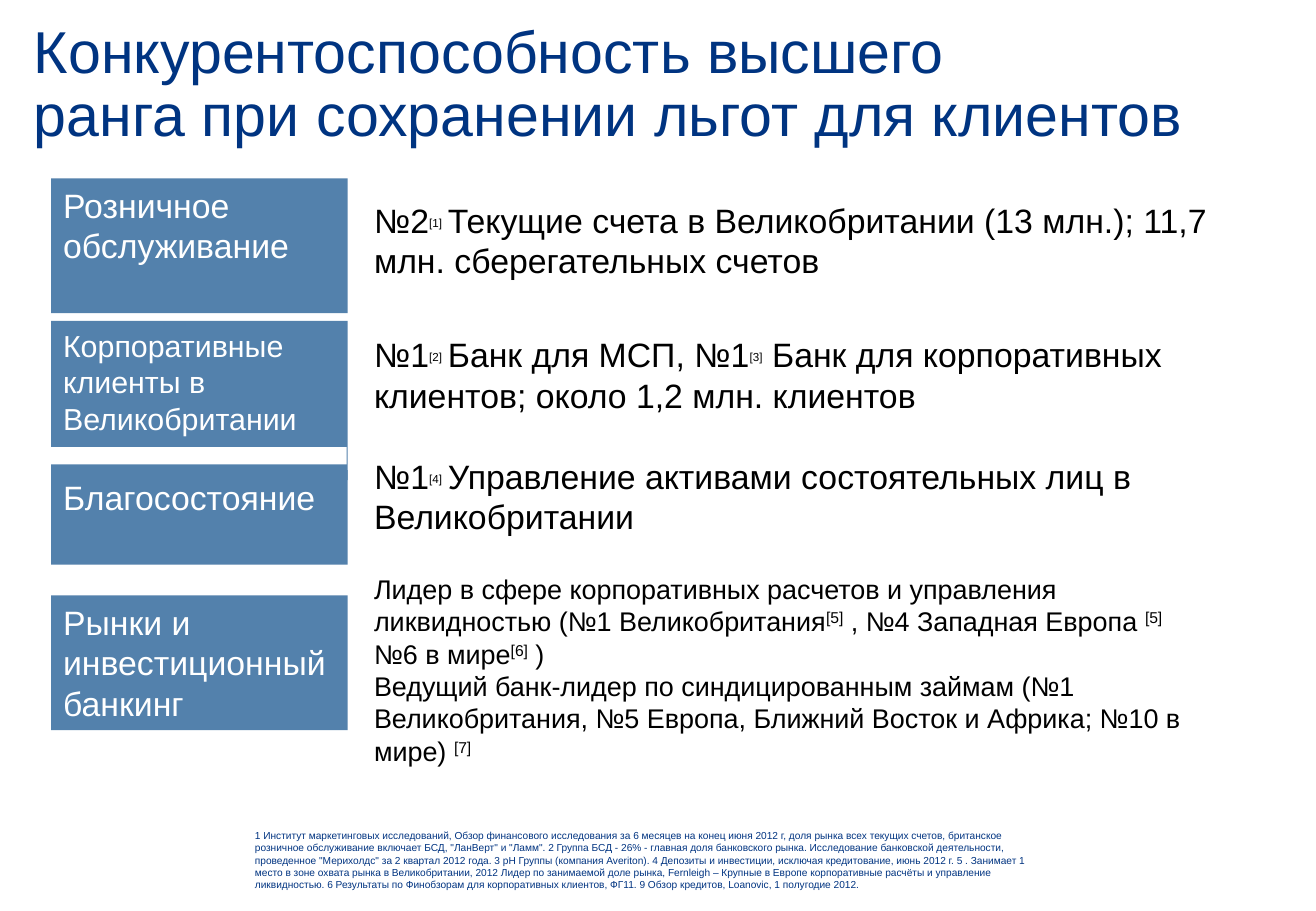
from dataclasses import dataclass

from pptx import Presentation
from pptx import util as u
from pptx.dml.color import RGBColor
from pptx.enum import shapes, text

NAVY, STEEL, WHITE, BLACK = "003481", "5381AC", "FFFFFF", "000000"
LABEL_LEFT, LABEL_WIDTH = 1.07, 6.2
DETAIL_LEFT = 7.57


@dataclass
class Box:
    left: float
    top: float
    width: float
    height: float

    def lengths(self) -> tuple:
        return tuple(u.Cm(n) for n in (self.left, self.top, self.width, self.height))


@dataclass
class Segment:
    label: str
    label_top: float
    label_height: float
    label_size: int
    details: list[str]  # text between "|" marks is a small note mark
    detail_top: float
    detail_width: float
    detail_height: float
    detail_size: int = 20
    note_size: int = 12


SEGMENTS = [
    Segment("Розничное обслуживание", 3.73, 2.82, 20,
            ["№2|[1] |Текущие счета в Великобритании (13 млн.); 11,7 млн. "
             "сберегательных счетов"],
            4.04, 18.47, 2.24),
    Segment("Корпоративные клиенты в Великобритании", 6.71, 3.33, 18,
            ["№1|[2] |Банк для МСП, №1|[3]| Банк для корпоративных клиентов; "
             "около 1,2 млн. клиентов"],
            6.86, 17.75, 3.07),
    Segment("Благосостояние", 9.83, 1.98, 20,
            ["№1|[4] |Управление активами состоятельных лиц в Великобритании"],
            9.4, 17.68, 3),
    Segment("Рынки и инвестиционный банкинг", 12.45, 2.82, 20,
            ["Лидер в сфере корпоративных расчетов и управления ликвидностью "
             "(№1 Великобритания|[5] |, №4 Западная Европа |[5] |№6 в мире|[6] |)",
             "Ведущий банк-лидер по синдицированным займам (№1 Великобритания, "
             "№5 Европа, Ближний Восток и Африка; №10 в мире) |[7]|"],
            11.84, 17.63, 4.37, 16, 16),
]

FOOTNOTE = (
    "1 Институт маркетинговых исследований, Обзор финансового исследования за "
    "6 месяцев на конец июня 2012 г, доля рынка всех текущих счетов, британское "
    "розничное обслуживание включает БСД, \"ЛанВерт\" и \"Ламм\". 2 Группа БСД - 26% - "
    "главная доля банковского рынка. Исследование банковской деятельности, "
    "проведенное \"Мерихолдс\" за 2 квартал 2012 года. 3 pH Группы (компания "
    "Averiton). 4 Депозиты и инвестиции, исключая кредитование, июнь 2012 г. 5 . "
    "Занимает 1 место в зоне охвата рынка в Великобритании, 2012 Лидер по занимаемой "
    "доле рынка, Fernleigh – Крупные в Европе корпоративные расчёты и управление "
    "ликвидностью. 6 Результаты по Финобзорам для корпоративных клиентов, ФГ11. "
    "9 Обзор кредитов, Loanovic, 1 полугодие 2012.")


def colour(code: str) -> RGBColor:
    return RGBColor.from_string(code)


def add_span(para, words: str, *, size: int, ink: str, raised: bool = False) -> None:
    span = para.add_run()
    span.text = words
    span.font.name = "Arial"
    span.font.size = u.Pt(size)
    span.font.color.rgb = colour(ink)
    if raised:
        span._r.get_or_add_rPr().set("baseline", "30000")


def write(frame, lines: list[str], *, size: int, ink: str, note_size: int = 12,
          spacing: float = 1.0, inset: tuple = (0.25, 0.13)) -> None:
    """Fill a text frame; note marks are raised, the space after them is not."""
    frame.word_wrap = True
    frame.auto_size = text.MSO_AUTO_SIZE.NONE
    frame.vertical_anchor = text.MSO_ANCHOR.TOP
    frame.margin_left = frame.margin_right = u.Cm(inset[0])
    frame.margin_top = frame.margin_bottom = u.Cm(inset[1])
    for index, line in enumerate(lines):
        para = frame.add_paragraph() if index else frame.paragraphs[0]
        para.alignment = text.PP_ALIGN.LEFT
        para.line_spacing = spacing
        para.space_before = u.Pt(0)
        for position, piece in enumerate(line.split("|")):
            if position % 2:
                add_span(para, piece.rstrip(), size=note_size, ink=ink, raised=True)
                if piece.endswith(" "):
                    add_span(para, " ", size=note_size, ink=ink)
            elif piece:
                for part, words in enumerate(piece.split("\n")):
                    if part:
                        para.add_line_break()
                    add_span(para, words, size=size, ink=ink)


def add_panel(page, box: Box, fill: str):
    panel = page.shapes.add_shape(shapes.MSO_SHAPE.RECTANGLE, *box.lengths())
    panel.shadow.inherit = False
    panel.fill.solid()
    panel.fill.fore_color.rgb = colour(fill)
    panel.line.fill.background()
    return panel


def add_text(page, box: Box, lines: list[str], **style) -> None:
    write(page.shapes.add_textbox(*box.lengths()).text_frame, lines, **style)


def main() -> None:
    deck = Presentation()
    deck.slide_width, deck.slide_height = u.Cm(27.51), u.Cm(19.05)
    page = deck.slides.add_slide(deck.slide_layouts[5])

    # Title
    title = page.shapes.title
    title.left, title.top, title.width, title.height = Box(0.71, 0.46, 25.83, 0.84).lengths()
    write(title.text_frame,
          ["Конкурентоспособность высшего \nранга при сохранении льгот для клиентов"],
          size=35, ink=NAVY, spacing=0.9, inset=(0, 0))

    # Footnote
    add_text(page, Box(5.08, 17.22, 17.07, 1.55), [FOOTNOTE], size=6, ink=NAVY)

    # Business segments: label panel and description
    for segment in SEGMENTS:
        label = add_panel(page, Box(LABEL_LEFT, segment.label_top, LABEL_WIDTH,
                                    segment.label_height), STEEL)
        write(label.text_frame, [segment.label], size=segment.label_size, ink=WHITE)
        add_text(page, Box(DETAIL_LEFT, segment.detail_top, segment.detail_width,
                           segment.detail_height),
                 segment.details, size=segment.detail_size, ink=BLACK,
                 note_size=segment.note_size)

    # White gap between the second and third labels
    add_panel(page, Box(0.88, 9.35, 6.37, 0.36), WHITE)

    deck.save("out.pptx")


if __name__ == "__main__":
    main()
